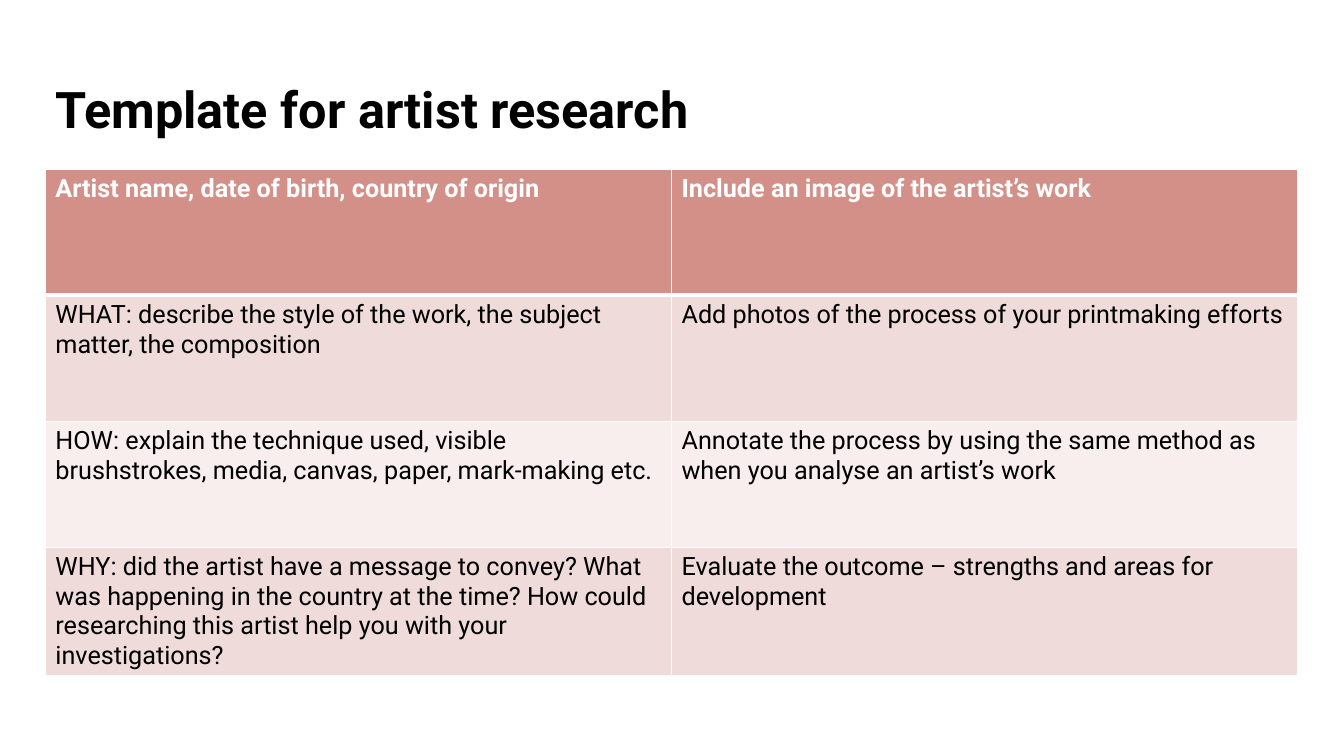
from lxml import etree
from pptx import Presentation
from pptx.dml import color
from pptx.enum import text
from pptx.oxml import ns
from pptx.util import Inches, Pt

FONT = "Roboto"
WHITE, BLACK = "FFFFFF", "000000"
HEADER_FILL = "D39089"
BAND_FILLS = ["F7EEED", "EFDBDA"]
ROWS = [
    ("Artist name, date of birth, country of origin",
     "Include an image of the artist’s work"),
    ("WHAT: describe the style of the work, the subject matter, the composition",
     "Add photos of the process of your printmaking efforts"),
    ("HOW: explain the technique used, visible brushstrokes, media, canvas, paper, "
     "mark-making etc.",
     "Annotate the process by using the same method as when you analyse an artist’s work"),
    ("WHY: did the artist have a message to convey? What was happening in the country "
     "at the time? How could researching this artist help you with your investigations?",
     "Evaluate the outcome – strengths and areas for development"),
]


def rgb(value):
    """Turn a hex string into a colour."""
    return color.RGBColor.from_string(value)


def add_run(paragraph, wording, size, hex_color, bold):
    """Add one formatted run to a paragraph."""
    run = paragraph.add_run()
    run.text = wording
    run.font.name = FONT
    run.font.size = Pt(size)
    run.font.bold = bold
    run.font.color.rgb = rgb(hex_color)


def set_border(cell, side, width):
    """Draw a white line on one side of a cell."""
    properties = cell._tc.get_or_add_tcPr()
    line = etree.SubElement(properties, ns.qn(f"a:ln{side}"), w=str(Pt(width)))
    fill = etree.SubElement(line, ns.qn("a:solidFill"))
    etree.SubElement(fill, ns.qn("a:srgbClr"), val=WHITE)


def add_title(slide, left, top, width, height):
    """Place the slide title in its placeholder."""
    title = slide.shapes.title
    title.left, title.top = Inches(left), Inches(top)
    title.width, title.height = Inches(width), Inches(height)
    frame = title.text_frame
    frame.margin_left = frame.margin_right = Inches(0.1)
    frame.margin_top = frame.margin_bottom = Inches(0.1)
    frame.word_wrap = True
    frame.auto_size = text.MSO_AUTO_SIZE.NONE
    frame.vertical_anchor = text.MSO_ANCHOR.MIDDLE
    paragraph = frame.paragraphs[0]
    paragraph.alignment = text.PP_ALIGN.LEFT
    add_run(paragraph, "Template for artist research", 36, BLACK, True)


def add_research_table(slide, left, top, width, height):
    """Place the research table with a header and banded rows."""
    frame = slide.shapes.add_table(len(ROWS), len(ROWS[0]), Inches(left),
                                   Inches(top), Inches(width), Inches(height))
    for row_index, row in enumerate(ROWS):
        header = row_index == 0
        for column_index, wording in enumerate(row):
            cell = frame.table.cell(row_index, column_index)
            for side in "LRTB":
                thick = (header and side == "B") or (row_index == 1 and side == "T")
                set_border(cell, side, 3 if thick else 1)
            cell.fill.solid()
            cell.fill.fore_color.rgb = rgb(HEADER_FILL if header else BAND_FILLS[row_index % 2])
            add_run(cell.text_frame.paragraphs[0], wording, 18,
                    WHITE if header else BLACK, header)


def main():
    """Build and save the slide."""
    presentation = Presentation()
    presentation.slide_width = Inches(13.33)
    presentation.slide_height = Inches(7.5)
    slide = presentation.slides.add_slide(presentation.slide_layouts[5])
    add_title(slide, 0.45, 0.65, 12.42, 0.84)
    add_research_table(slide, 0.45, 1.68, 12.42, 5)
    presentation.save("out.pptx")


if __name__ == "__main__":
    main()
